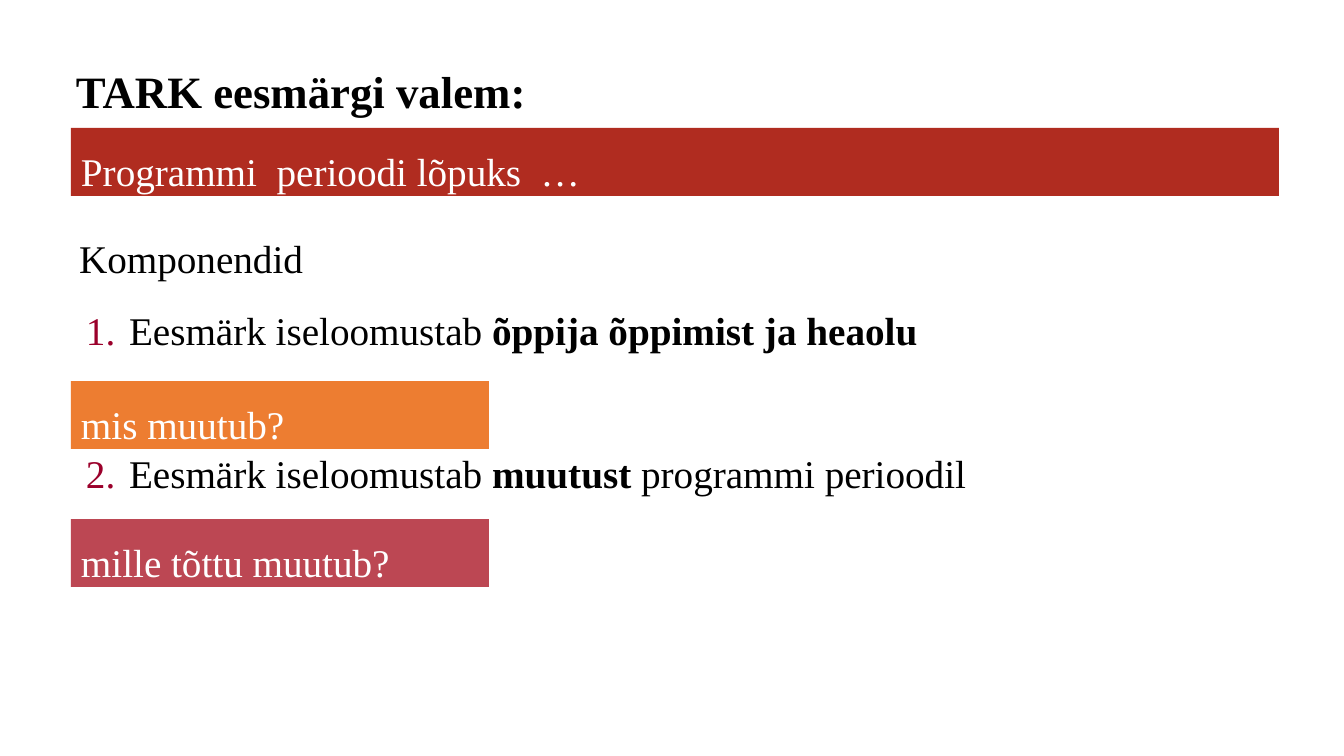
import pptx
import pptx.dml.color
import pptx.enum.shapes
import pptx.enum.text
import pptx.util
from pptx.oxml.xmlchemy import OxmlElement

RGBColor = pptx.dml.color.RGBColor
BLACK = RGBColor(0x00, 0x00, 0x00)
WHITE = RGBColor(0xFF, 0xFF, 0xFF)
RED = RGBColor(0xB0, 0x2C, 0x20)
ORANGE = RGBColor(0xED, 0x7D, 0x31)
ROSE = RGBColor(0xBC, 0x47, 0x53)
NUMBER = RGBColor(0x9B, 0x00, 0x2B)

FONT = "Times New Roman"
INSET = 10
ANCHOR = pptx.enum.text.MSO_ANCHOR


def px(length):
    return pptx.util.Emu(round(length * 914400 / 100.8))


def prepare_frame(shape, anchor=ANCHOR.TOP):
    frame = shape.text_frame
    frame.word_wrap = True
    frame.vertical_anchor = anchor
    frame.margin_left = frame.margin_right = px(INSET)
    frame.margin_top = frame.margin_bottom = px(INSET)
    return frame


def fill_paragraph(para, spans, size, color):
    """Write (text, bold) spans into a left-aligned paragraph."""
    para.alignment = pptx.enum.text.PP_ALIGN.LEFT
    for text, bold in spans:
        span = para.add_run()
        span.text = text
        span.font.name = FONT
        span.font.size = pptx.util.Pt(size)
        span.font.bold = bold
        span.font.color.rgb = color


def number_paragraph(para):
    """Give the paragraph a hanging, coloured automatic number."""
    properties = para._p.get_or_add_pPr()
    properties.set("marL", str(px(50)))
    properties.set("indent", str(-px(43)))
    bullet_color = OxmlElement("a:buClr")
    color = OxmlElement("a:srgbClr")
    color.set("val", str(NUMBER))
    bullet_color.append(color)
    numbering = OxmlElement("a:buAutoNum")
    numbering.set("type", "arabicPeriod")
    properties.append(bullet_color)
    properties.append(numbering)


def add_title(page, left, top, width, height):
    box = page.shapes.add_textbox(px(left), px(top), px(width), px(height))
    frame = prepare_frame(box, ANCHOR.BOTTOM)
    fill_paragraph(frame.paragraphs[0], [("TARK eesmärgi valem:", True)], 32, BLACK)


def add_components(page, left, top, width, height):
    box = page.shapes.add_textbox(px(left), px(top), px(width), px(height))
    frame = prepare_frame(box)
    heading = frame.paragraphs[0]
    heading.line_spacing = 1.2
    fill_paragraph(heading, [("Komponendid", False)], 28, BLACK)

    # The second item leaves room for the bar above it
    items = [
        (11, [("Eesmärk iseloomustab ", False),
              ("õppija õppimist ja heaolu", True)]),
        (62, [("Eesmärk iseloomustab ", False), ("muutust ", True),
              ("programmi perioodil", False)]),
    ]
    for space_before, spans in items:
        para = frame.add_paragraph()
        para.line_spacing = 1.2
        para.space_before = pptx.util.Pt(space_before)
        number_paragraph(para)
        fill_paragraph(para, spans, 28, BLACK)


def add_bar(page, text, color, left, top, width, height):
    bar = page.shapes.add_shape(
        pptx.enum.shapes.MSO_SHAPE.RECTANGLE,
        px(left), px(top), px(width), px(height))
    bar.shadow.inherit = False
    bar.fill.solid()
    bar.fill.fore_color.rgb = color
    bar.line.fill.background()
    para = prepare_frame(bar).paragraphs[0]
    para.line_spacing = 1.2
    fill_paragraph(para, [(text, False)], 28, WHITE)


def build_goal_slide(deck):
    page = deck.slides.add_slide(deck.slide_layouts[6])
    add_title(page, 66, 26, 1218, 102)
    add_components(page, 69, 215, 1137, 399)
    bars = [
        ("mis muutub?", ORANGE, 381, 418),
        ("mille tõttu muutub?", ROSE, 519, 418),
        ("Programmi  perioodi lõpuks  …", RED, 128, 1208),
    ]
    for text, color, top, width in bars:
        add_bar(page, text, color, 71, top, width, 68)


def main():
    deck = pptx.Presentation()
    deck.slide_width = px(1344)
    deck.slide_height = px(756)
    build_goal_slide(deck)
    deck.save("out.pptx")


if __name__ == "__main__":
    main()
